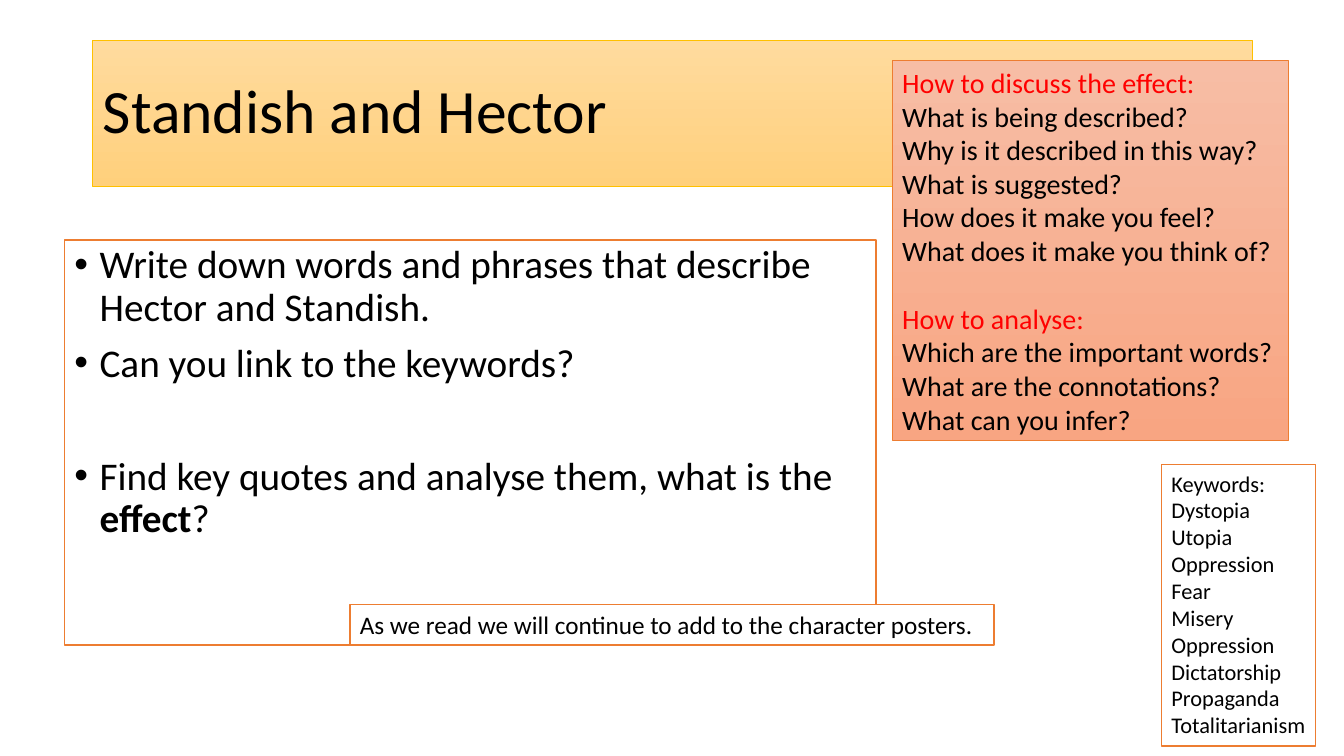
import pptx
import pptx.util
import pptx.dml.color
import pptx.enum.text
from lxml import etree

Inches, Pt = pptx.util.Inches, pptx.util.Pt
RGBColor = pptx.dml.color.RGBColor
MSO_ANCHOR = pptx.enum.text.MSO_ANCHOR
MSO_AUTO_SIZE = pptx.enum.text.MSO_AUTO_SIZE
PP_ALIGN = pptx.enum.text.PP_ALIGN

BLACK = RGBColor(0x00, 0x00, 0x00)
WHITE = RGBColor(0xFF, 0xFF, 0xFF)
RED = RGBColor(0xFF, 0x00, 0x00)
GOLD = RGBColor(0xFF, 0xC0, 0x00)
ORANGE = RGBColor(0xED, 0x7D, 0x31)
GOLD_FADE = (RGBColor(0xFF, 0xDB, 0x9E), RGBColor(0xFF, 0xD0, 0x7C))
ORANGE_FADE = (RGBColor(0xF7, 0xBD, 0xA5), RGBColor(0xF8, 0xA5, 0x82))

TITLE = "Standish and Hector"
TASKS = [
    (["Write down words and phrases that describe Hector and Standish."], 0),
    (["Can you link to the keywords?"], 10),
    (["Find key quotes and analyse them, what is the ", "effect", "?"], 50.5),
]
BOLD_WORD = "effect"
REMINDER = ["As we read we will continue to add to the character posters."]
QUESTIONS = {
    "How to discuss the effect:": [
        "What is being described?",
        "Why is it described in this way?",
        "What is suggested?",
        "How does it make you feel?",
        "What does it make you think of?",
    ],
    "How to analyse:": [
        "Which are the important words?",
        "What are the connotations?",
        "What can you infer?",
    ],
}
KEYWORDS = ["Keywords:", "Dystopia", "Utopia", "Oppression", "Fear", "Misery",
            "Oppression", "Dictatorship", "Propaganda", "Totalitarianism"]


def style_box(sp, line, width, fade=None):
    """Outline a box and fill it white or with a vertical gradient."""
    sp.line.color.rgb = line
    sp.line.width = Pt(width)
    if fade is None:
        sp.fill.solid()
        sp.fill.fore_color.rgb = WHITE
        return
    sp.fill.gradient()
    sp.fill.gradient_angle = 270
    for stop, color in zip(sp.fill.gradient_stops, fade):
        stop.color.rgb = color


def style_font(font, size, color=BLACK):
    """Set the typeface, size and colour of a font."""
    font.name = "Calibri"
    font.size = Pt(size)
    font.color.rgb = color


def add_box(s, at, width=1, fade=None):
    """Add an orange-outlined text box."""
    sp = s.shapes.add_textbox(*map(Inches, at))
    style_box(sp, ORANGE, width, fade)
    return sp


def next_paragraph(tf, index):
    """Return the first paragraph, or a new one after it."""
    return tf.add_paragraph() if index else tf.paragraphs[0]


def add_list(s, at, lines, size, width=1, fade=None):
    """Add a box of plain lines, with red headings for the questions."""
    tf = add_box(s, at, width, fade).text_frame
    tf.word_wrap = False
    tf.auto_size = MSO_AUTO_SIZE.SHAPE_TO_FIT_TEXT
    for i, line in enumerate(lines):
        p = next_paragraph(tf, i)
        p.text = line
        heading = line in QUESTIONS
        if heading and i:
            p.space_before = Pt(size * 1.22)
        style_font(p.runs[0].font, size, RED if heading else BLACK)


def add_title(s):
    """Place and format the title placeholder."""
    sp = s.shapes.title
    sp.left, sp.top, sp.width, sp.height = map(Inches, (0.92, 0.4, 11.5, 1.45))
    style_box(sp, GOLD, 0.5, GOLD_FADE)
    tf = sp.text_frame
    tf.text = TITLE
    tf.auto_size = MSO_AUTO_SIZE.NONE
    tf.vertical_anchor = MSO_ANCHOR.MIDDLE
    p = tf.paragraphs[0]
    p.alignment = PP_ALIGN.LEFT
    p.line_spacing = 0.9
    style_font(p.runs[0].font, 44)


def add_tasks(s):
    """Add the bulleted tasks."""
    tf = add_box(s, (0.64, 2.38, 8.05, 4.02)).text_frame
    tf.word_wrap = True
    for i, (parts, gap) in enumerate(TASKS):
        p = next_paragraph(tf, i)
        p.line_spacing = 0.9
        p.space_before = Pt(gap)
        pPr = p._p.get_or_add_pPr()
        pPr.set("marL", str(Inches(0.25)))
        pPr.set("indent", str(-Inches(0.25)))
        ns = pPr.nsmap["a"]
        etree.SubElement(pPr, f"{{{ns}}}buFont", typeface="Arial")
        etree.SubElement(pPr, f"{{{ns}}}buChar", char="•")
        for part in parts:
            r = p.add_run()
            r.text = part
            style_font(r.font, 28)
            r.font.bold = part == BOLD_WORD


def main():
    """Build the slide and save it."""
    prs = pptx.Presentation()
    prs.slide_width, prs.slide_height = Inches(13.33), Inches(7.5)
    s = prs.slides.add_slide(prs.slide_layouts[5])
    add_title(s)
    add_tasks(s)
    add_list(s, (3.47, 6, 6.39, 0.4), REMINDER, 18)
    questions = [line for head, rest in QUESTIONS.items() for line in (head, *rest)]
    add_list(s, (8.85, 0.6, 3.93, 3.77), questions, 20, 0.5, ORANGE_FADE)
    add_list(s, (11.52, 4.61, 1.53, 2.79), KEYWORDS, 16)
    prs.save("out.pptx")


if __name__ == "__main__":
    main()
